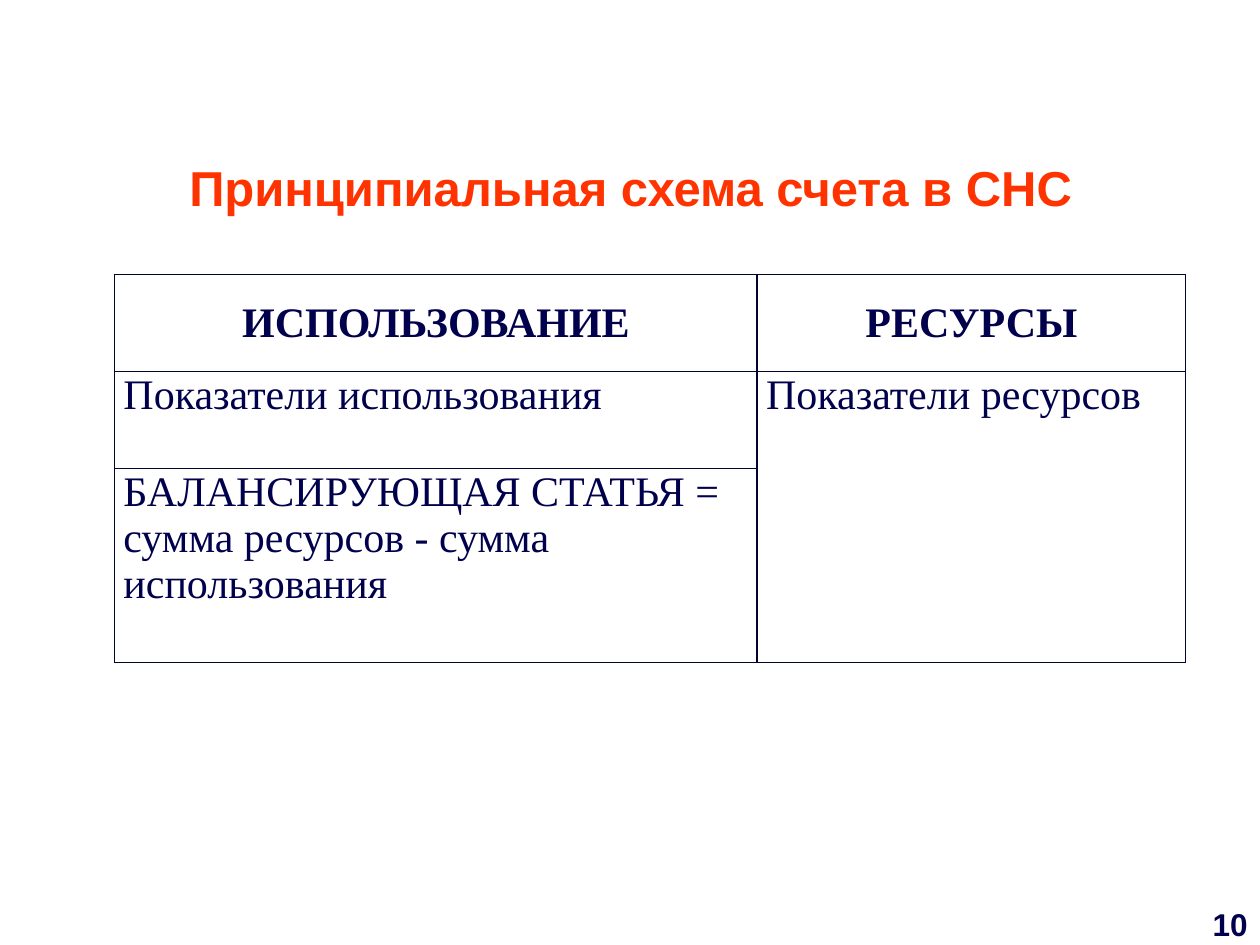
from pptx import Presentation
from pptx.dml.color import RGBColor
from pptx.enum.text import MSO_ANCHOR as Anchor, PP_ALIGN as Align
from pptx.oxml import parse_xml
from pptx.oxml.ns import nsdecls
from pptx.util import Inches, Pt

COLORS = {"title": "FF3300", "text": "00004C", "border": "00062B"}


def format_text(text_frame, align, font_name, size, color, bold):
    for paragraph in text_frame.paragraphs:
        paragraph.alignment = align
        for run in paragraph.runs:
            run.font.name = font_name
            run.font.size = Pt(size)
            run.font.bold = bold
            run.font.color.rgb = RGBColor.from_string(COLORS[color])


def add_borders(cell):
    """Draw a 1 pt line on all four sides; call before setting the fill."""
    properties = cell._tc.get_or_add_tcPr()
    for side in ("lnL", "lnR", "lnT", "lnB"):
        properties.append(parse_xml(
            f'<a:{side} {nsdecls("a")} w="{Pt(1)}"><a:solidFill>'
            f'<a:srgbClr val="{COLORS["border"]}"/></a:solidFill></a:{side}>'))


presentation = Presentation()
presentation.slide_width = Inches(10)
presentation.slide_height = Inches(7.5)
slide = presentation.slides.add_slide(presentation.slide_layouts[6])

# Title and slide number
text_boxes = [
    ("Принципиальная схема счета в СНС", (0.2, 1.2, 9.61, 0.57),
     Anchor.TOP, Align.CENTER, 28, "title"),
    ("10", (9.49, 7.14, 0.51, 0.39), Anchor.BOTTOM, Align.RIGHT, 18, "text"),
]
for text, place, anchor, align, size, color in text_boxes:
    text_frame = slide.shapes.add_textbox(*map(Inches, place)).text_frame
    text_frame.word_wrap = True
    text_frame.vertical_anchor = anchor
    text_frame.text = text
    format_text(text_frame, align, "Arial", size, color, True)

# Account table
column_widths = [5.1, 3.4]
row_heights = [0.77, 0.77, 1.54]
rows = [
    ["ИСПОЛЬЗОВАНИЕ", "РЕСУРСЫ"],
    ["Показатели использования", "Показатели ресурсов"],
    ["БАЛАНСИРУЮЩАЯ СТАТЬЯ = \vсумма ресурсов ‑ сумма использования", ""],
]
table = slide.shapes.add_table(
    len(rows), len(column_widths), Inches(0.91), Inches(2.18),
    Inches(sum(column_widths)), Inches(sum(row_heights))).table
table.first_row = False
table.horz_banding = False
for column, width in zip(table.columns, column_widths):
    column.width = Inches(width)
for row, height in zip(table.rows, row_heights):
    row.height = Inches(height)

for row_index, row_texts in enumerate(rows):
    is_header = row_index == 0
    for column_index, text in enumerate(row_texts):
        cell = table.cell(row_index, column_index)
        add_borders(cell)
        cell.fill.background()
        cell.margin_left = cell.margin_right = Inches(0.07)
        cell.margin_top = cell.margin_bottom = 0
        cell.vertical_anchor = Anchor.MIDDLE if is_header else Anchor.TOP
        cell.text_frame.text = text
        format_text(cell.text_frame, Align.CENTER if is_header else Align.LEFT,
                    "Times New Roman", 24, "text", is_header)
table.cell(1, 1).merge(table.cell(2, 1))

presentation.save("out.pptx")
